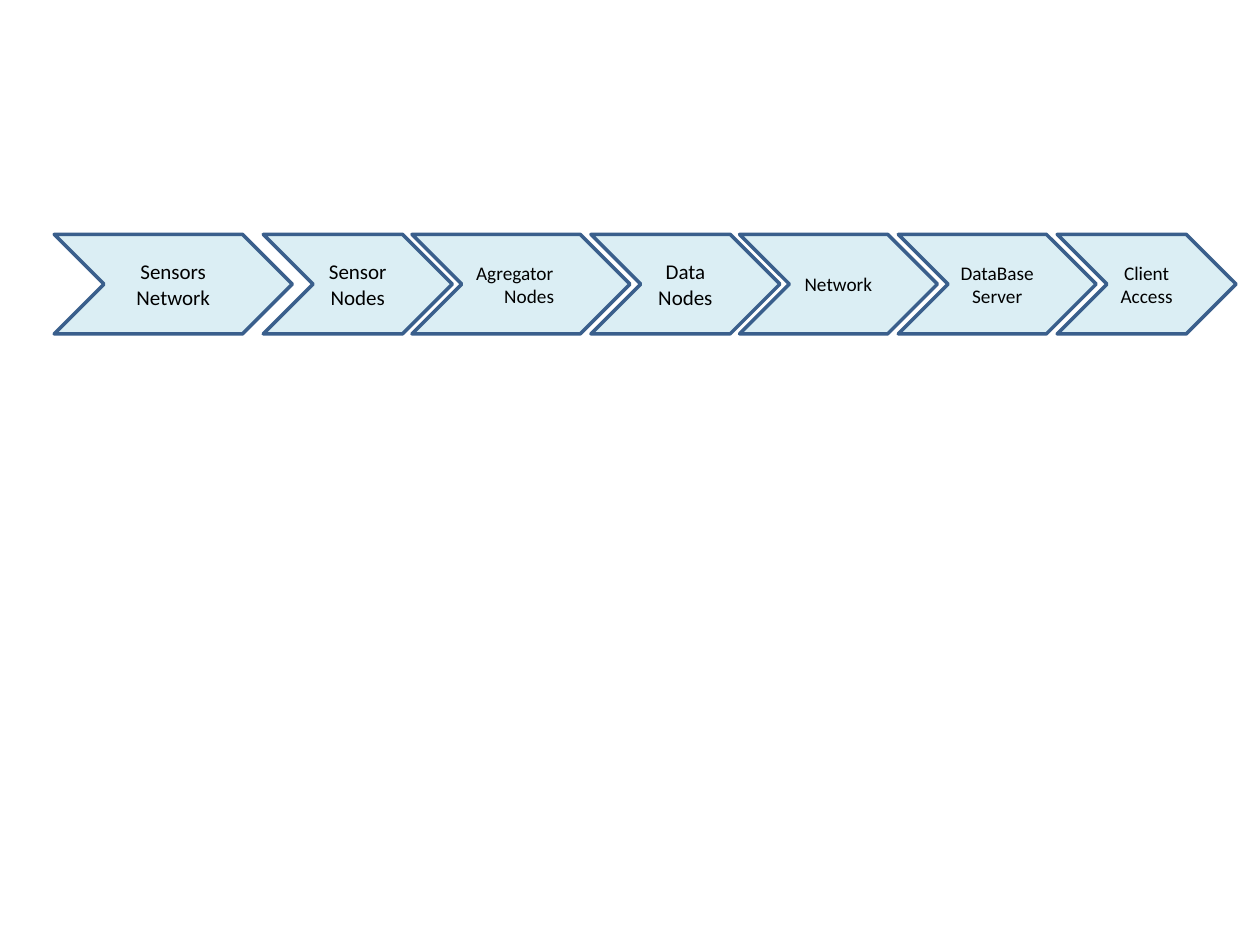
import pptx
import pptx.util
import pptx.dml.color
import pptx.enum.shapes
import pptx.enum.text

Inches = pptx.util.Inches
STEPS = [
    ("Sensors Network", 0, 1.89, 12),
    ("Sensor Nodes", 1.66, 1.5, 12),
    ("Agregator Nodes", 2.84, 1.73, 11),
    ("Data Nodes", 4.26, 1.5, 12),
    ("Network", 5.44, 1.57, 11),
    ("DataBase Server", 6.7, 1.57, 11),
    ("Client Access", 7.96, 1.42, 11),
]


def color(text):
    """Turn a hex string into a colour."""
    return pptx.dml.color.RGBColor.from_string(text)


def add_step(slide, label, left, top, width, height, size):
    """Add one chevron with its centred label."""
    step = slide.shapes.add_shape(
        pptx.enum.shapes.MSO_SHAPE.CHEVRON, left, top, width, height)
    step.shadow.inherit = False
    step.fill.solid()
    step.fill.fore_color.rgb = color("DBEEF4")
    step.line.color.rgb = color("3A5F8C")
    step.line.width = pptx.util.Pt(2)
    frame = step.text_frame
    frame.word_wrap = True
    frame.vertical_anchor = pptx.enum.text.MSO_ANCHOR.MIDDLE
    para = frame.paragraphs[0]
    para.text = label
    para.alignment = pptx.enum.text.PP_ALIGN.CENTER
    para.font.name = "Calibri"
    para.font.size = pptx.util.Pt(size)
    para.font.color.rgb = color("000000")
    return step


def hang_label(step, indent):
    """Shift the second line of a label right with a hanging indent."""
    step.text_frame.margin_left = 0
    props = step.text_frame.paragraphs[0]._p.get_or_add_pPr()
    props.set("marL", str(indent))
    props.set("indent", str(-indent))


def add_chain(slide, left, top, height):
    """Add the row of chevrons from sensors to client."""
    for label, shift, width, size in STEPS:
        step = add_step(slide, label, left + Inches(shift), top,
                        Inches(width), height, size)
        if label == "Agregator Nodes":
            hang_label(step, Inches(0.23))


def main():
    """Build and save the slide."""
    deck = pptx.Presentation()
    deck.slide_width = Inches(10)
    deck.slide_height = Inches(7.5)
    slide = deck.slides.add_slide(deck.slide_layouts[6])
    add_chain(slide, Inches(0.43), Inches(1.86), Inches(0.79))
    deck.save("out.pptx")


if __name__ == "__main__":
    main()
